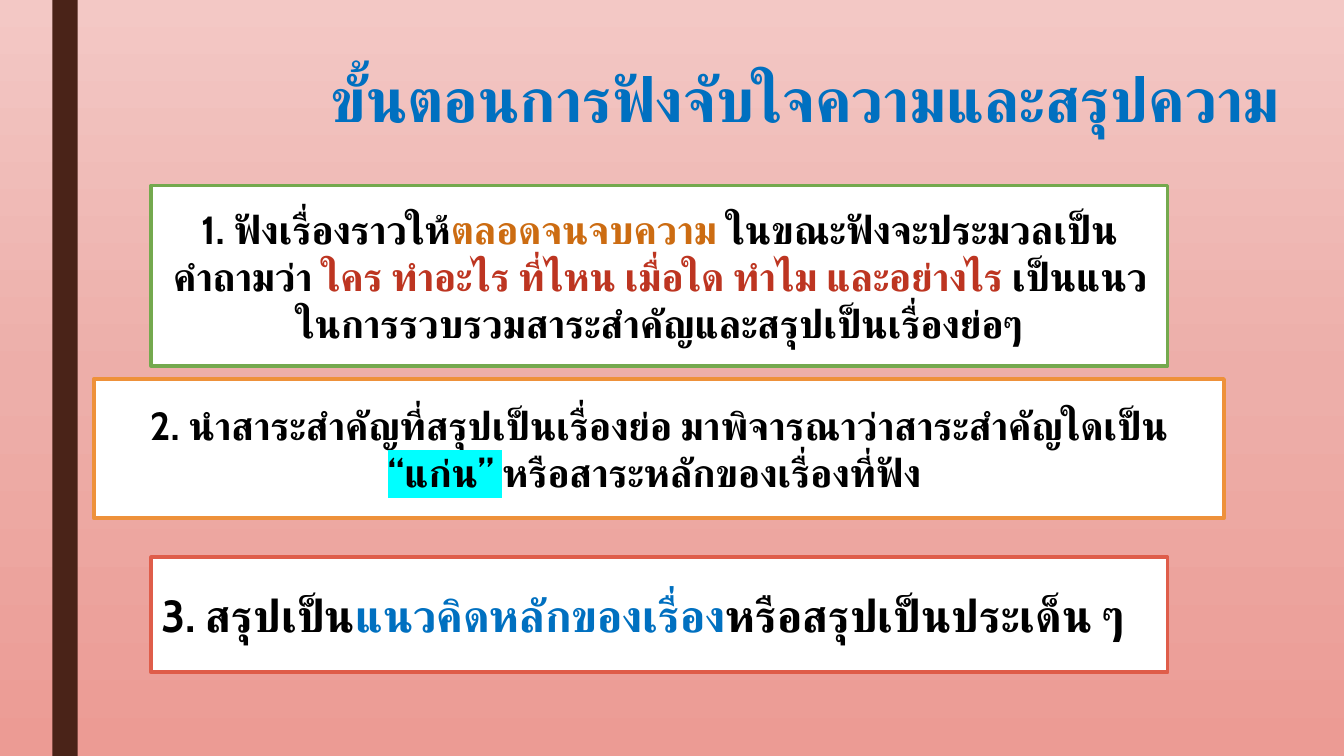
import copy
from dataclasses import dataclass

import lxml.etree
import pptx
import pptx.dml.color
import pptx.enum.shapes
import pptx.enum.text
import pptx.oxml.ns
import pptx.util

Inches = pptx.util.Inches
RGBColor = pptx.dml.color.RGBColor
Align = pptx.enum.text.PP_ALIGN
Anchor = pptx.enum.text.MSO_ANCHOR
qn = pptx.oxml.ns.qn

FONT = "Cabin"
BLACK = RGBColor(0x00, 0x00, 0x00)
WHITE = RGBColor(0xFF, 0xFF, 0xFF)
BLUE = RGBColor(0x00, 0x70, 0xC0)
BROWN = RGBColor(0x4A, 0x23, 0x18)
AMBER = RGBColor(0xCC, 0x6C, 0x12)
BRICK = RGBColor(0xBD, 0x35, 0x21)
CYAN = RGBColor(0x00, 0xFF, 0xFF)
GREEN_LINE = RGBColor(0x74, 0xA9, 0x4E)
ORANGE_LINE = RGBColor(0xEE, 0x91, 0x3A)
RED_LINE = RGBColor(0xDF, 0x5D, 0x4A)
BACKGROUND = (
    RGBColor(0xF3, 0xC8, 0xC5),
    RGBColor(0xED, 0xAE, 0xA9),
    RGBColor(0xEC, 0x9B, 0x94),
)


@dataclass
class Phrase:
    text: str
    color: RGBColor = BLACK
    highlight: RGBColor | None = None


@dataclass
class Step:
    left: float
    top: float
    width: float
    height: float
    line: RGBColor
    phrases: list[Phrase]
    size: int = 28
    align: Align = Align.CENTER


STEPS = [
    Step(1.5, 1.84, 10.08, 1.79, GREEN_LINE, [
        Phrase("1. ฟังเรื่องราวให้"),
        Phrase("ตลอดจนจบความ ", AMBER),
        Phrase("ในขณะฟังจะประมวลเป็นคำถามว่า "),
        Phrase("ใคร ทำอะไร ที่ไหน เมื่อใด ทำไม และอย่างไร", BRICK),
        Phrase(" เป็นแนวในการรวบรวมสาระสำคัญและสรุปเป็นเรื่องย่อๆ"),
    ]),
    Step(0.93, 3.76, 11.21, 1.38, ORANGE_LINE, [
        Phrase("2. นำสาระสำคัญที่สรุปเป็นเรื่องย่อ มาพิจารณาว่าสาระสำคัญใดเป็น "),
        Phrase("“แก่น” ", highlight=CYAN),
        Phrase("หรือสาระหลักของเรื่องที่ฟัง "),
    ]),
    Step(1.5, 5.53, 10.08, 1.14, RED_LINE, [
        Phrase("3. สรุปเป็น"),
        Phrase("แนวคิดหลักของเรื่อง", BLUE),
        Phrase("หรือสรุปเป็นประเด็น ๆ"),
    ], size=32, align=Align.LEFT),
]


def paint_background(slide: pptx.slide.Slide) -> None:
    fill = slide.background.fill
    fill.gradient()
    fill.gradient_angle = 270
    first_stop = fill.gradient_stops[0]._gs
    first_stop.addnext(copy.deepcopy(first_stop))
    for index, (stop, color) in enumerate(zip(fill.gradient_stops, BACKGROUND)):
        stop.position = index / 2
        stop.color.rgb = color


def write_text(
    shape: pptx.shapes.autoshape.Shape,
    phrases: list[Phrase],
    *,
    size: int,
    align: Align = Align.LEFT,
    anchor: Anchor = Anchor.MIDDLE,
    line_spacing: float = 1.0,
) -> None:
    frame = shape.text_frame
    frame.word_wrap = True
    frame.vertical_anchor = anchor
    paragraph = frame.paragraphs[0]
    paragraph.alignment = align
    paragraph.line_spacing = line_spacing
    for phrase in phrases:
        run = paragraph.add_run()
        run.text = phrase.text
        run.font.size = pptx.util.Pt(size)
        run.font.bold = True
        run.font.name = FONT
        run.font.color.rgb = phrase.color
        properties = run._r.get_or_add_rPr()
        lxml.etree.SubElement(properties, qn("a:cs"), typeface=FONT)
        if phrase.highlight is not None:
            highlight = lxml.etree.Element(qn("a:highlight"))
            lxml.etree.SubElement(highlight, qn("a:srgbClr"), val=str(phrase.highlight))
            properties.find(qn("a:solidFill")).addnext(highlight)


def add_rectangle(
    slide: pptx.slide.Slide,
    left: float,
    top: float,
    width: float,
    height: float,
    fill: RGBColor,
    line: RGBColor | None = None,
) -> pptx.shapes.autoshape.Shape:
    shape = slide.shapes.add_shape(
        pptx.enum.shapes.MSO_SHAPE.RECTANGLE,
        Inches(left), Inches(top), Inches(width), Inches(height),
    )
    shape.shadow.inherit = False
    shape.fill.solid()
    shape.fill.fore_color.rgb = fill
    if line is None:
        shape.line.fill.background()
    else:
        shape.line.color.rgb = line
        shape.line.width = pptx.util.Pt(2.75)
    return shape


def add_step(slide: pptx.slide.Slide, step: Step) -> None:
    box = add_rectangle(
        slide, step.left, step.top, step.width, step.height, WHITE, step.line
    )
    write_text(box, step.phrases, size=step.size, align=step.align)


def main() -> None:
    presentation = pptx.Presentation()
    presentation.slide_width = Inches(13.33)
    presentation.slide_height = Inches(7.5)
    slide = presentation.slides.add_slide(presentation.slide_layouts[6])
    paint_background(slide)
    add_rectangle(slide, 0.52, 0, 0.25, 7.5, BROWN)
    title = slide.shapes.add_textbox(
        Inches(3.18), Inches(0.64), Inches(10.5), Inches(1.62)
    )
    write_text(
        title,
        [Phrase("ขั้นตอนการฟังจับใจความและสรุปความ", BLUE)],
        size=44,
        anchor=Anchor.TOP,
        line_spacing=0.89,
    )
    for step in STEPS:
        add_step(slide, step)
    presentation.save("out.pptx")


if __name__ == "__main__":
    main()
